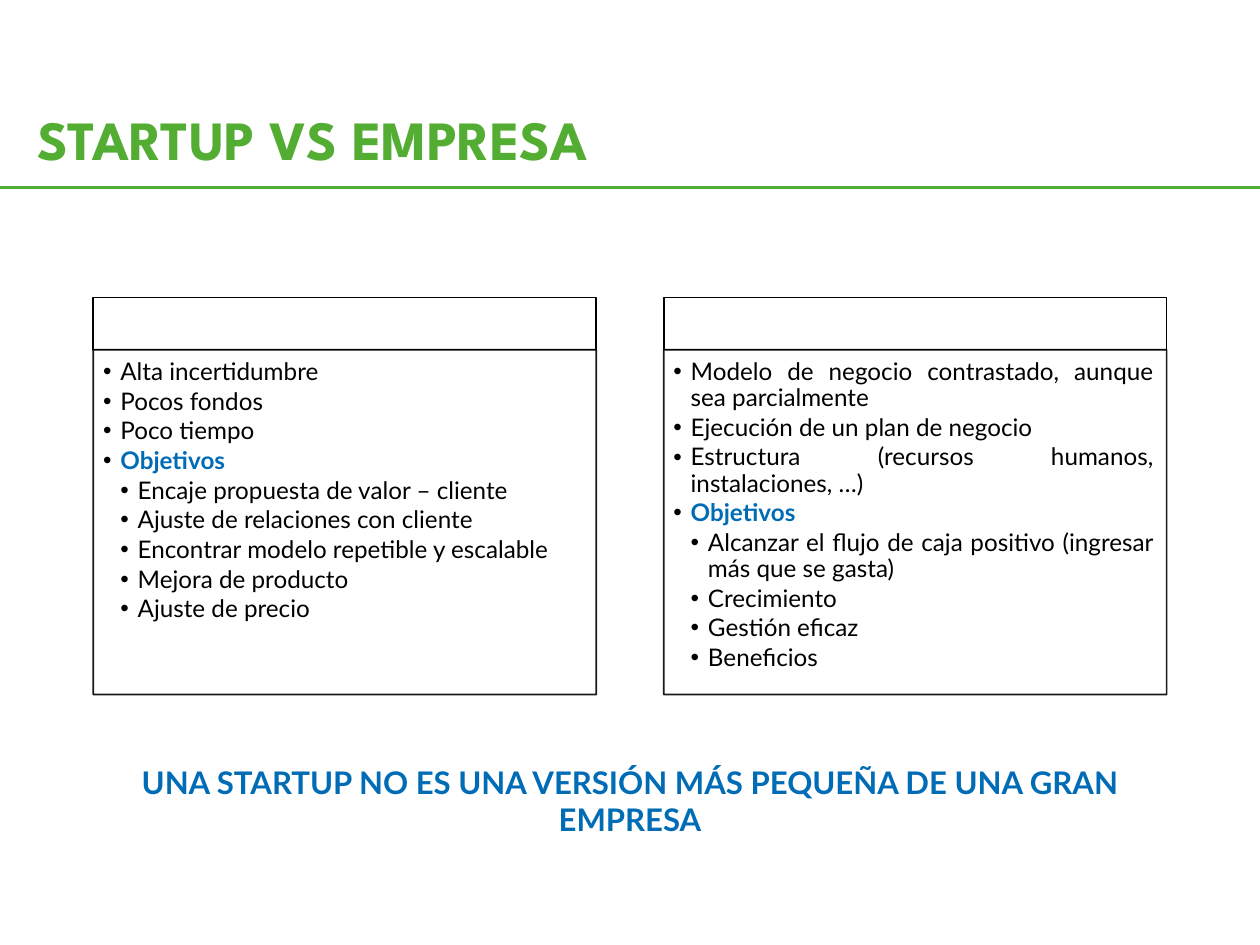
from lxml import etree
from pptx import Presentation
from pptx.dml.color import RGBColor
from pptx.enum.shapes import MSO_CONNECTOR as LINE, MSO_SHAPE as SHAPE
from pptx.enum.text import MSO_ANCHOR as ANCHOR, PP_ALIGN as ALIGN
from pptx.oxml.ns import qn
from pptx.util import Pt

GREEN = RGBColor(0x53, 0xAD, 0x32)
BLUE = RGBColor(0x00, 0x6C, 0xB5)
BLACK = RGBColor(0, 0, 0)
WHITE = RGBColor(255, 255, 255)

GOALS = "Objetivos"
# Items after GOALS are indented one level.
LISTS = [
    ["Alta incertidumbre", "Pocos fondos", "Poco tiempo", GOALS,
     "Encaje propuesta de valor – cliente",
     "Ajuste de relaciones con cliente",
     "Encontrar modelo repetible y escalable",
     "Mejora de producto", "Ajuste de precio"],
    ["Modelo de negocio contrastado, aunque sea parcialmente",
     "Ejecución de un plan de negocio",
     "Estructura (recursos humanos, instalaciones, …)", GOALS,
     "Alcanzar el flujo de caja positivo (ingresar más que se gasta)",
     "Crecimiento", "Gestión eficaz", "Beneficios"],
]
LEFT, TOP, WIDTH = 54, 172.1, 290.9
HEAD, BODY, STEP = 30.2, 199.4, 329.8
INDENT = 10


def write(para, text, **look):
    run = para.add_run()
    run.text = text
    for key, value in look.items():
        if key == "color":
            run.font.color.rgb = value
        else:
            setattr(run.font, key, value)


def add_box(left, top, height):
    box = slide.shapes.add_shape(
        SHAPE.RECTANGLE, Pt(left), Pt(top), Pt(WIDTH), Pt(height))
    box.shadow.inherit = False
    box.fill.solid()
    box.fill.fore_color.rgb = WHITE
    box.line.color.rgb = BLACK
    box.line.width = Pt(1)
    return box


deck = Presentation()
deck.slide_width, deck.slide_height = Pt(728.64), Pt(546.48)
slide = deck.slides.add_slide(deck.slide_layouts[6])

for col, items in enumerate(LISTS):
    left = LEFT + col * STEP
    add_box(left, TOP, HEAD)
    body = add_box(left, TOP + HEAD, BODY)
    for color in body._element.spPr.iter(qn("a:srgbClr")):
        etree.SubElement(color, qn("a:alpha"), val="90000")

    frame = body.text_frame
    form = {"word_wrap": True, "vertical_anchor": ANCHOR.TOP,
            "margin_left": Pt(5.6), "margin_top": Pt(5.6),
            "margin_right": Pt(7.5), "margin_bottom": Pt(8.4)}
    for key, value in form.items():
        setattr(frame, key, value)

    for row, text in enumerate(items):
        para = frame.add_paragraph() if row else frame.paragraphs[0]
        goal = text == GOALS
        form = {"alignment": ALIGN.JUSTIFY, "line_spacing": 0.9,
                "space_before": Pt(2 if row else 0),
                "level": int(row > items.index(GOALS))}
        for key, value in form.items():
            setattr(para, key, value)
        write(para, text, name="Lato", size=Pt(14), bold=goal,
              color=BLUE if goal else BLACK)

        props = para._p.get_or_add_pPr()
        props.set("marL", str(Pt(INDENT * (para.level + 1))))
        props.set("indent", str(Pt(-INDENT)))
        tint = etree.SubElement(props, qn("a:buClr"))
        etree.SubElement(tint, qn("a:srgbClr"), val=str(BLACK))
        etree.SubElement(props, qn("a:buFont"), typeface="Arial")
        etree.SubElement(props, qn("a:buChar"), char="•")

rule = slide.shapes.add_connector(
    LINE.STRAIGHT, Pt(0), Pt(108.5), deck.slide_width, Pt(108.5))
rule.line.color.rgb = GREEN
rule.line.width = Pt(2)
etree.SubElement(rule._element.spPr, qn("a:effectLst"))

TEXTS = [
    ("STARTUP VS EMPRESA", (14.4, 57, 515, 46), ALIGN.LEFT,
     "League Spartan", 32, GREEN),
    ("UNA STARTUP NO ES UNA VERSIÓN MÁS PEQUEÑA DE UNA GRAN EMPRESA",
     (54, 438.5, 620.6, 49), ALIGN.CENTER, "Lato", 18, BLUE),
]
for text, place, align, font, size, color in TEXTS:
    frame = slide.shapes.add_textbox(*map(Pt, place)).text_frame
    frame.word_wrap = True
    if align == ALIGN.CENTER:
        frame.margin_left = frame.margin_right = Pt(5)
        frame.margin_top = frame.margin_bottom = Pt(2.9)
    para = frame.paragraphs[0]
    para.alignment = align
    write(para, text, name=font, size=Pt(size), bold=True, color=color)

deck.save("out.pptx")
